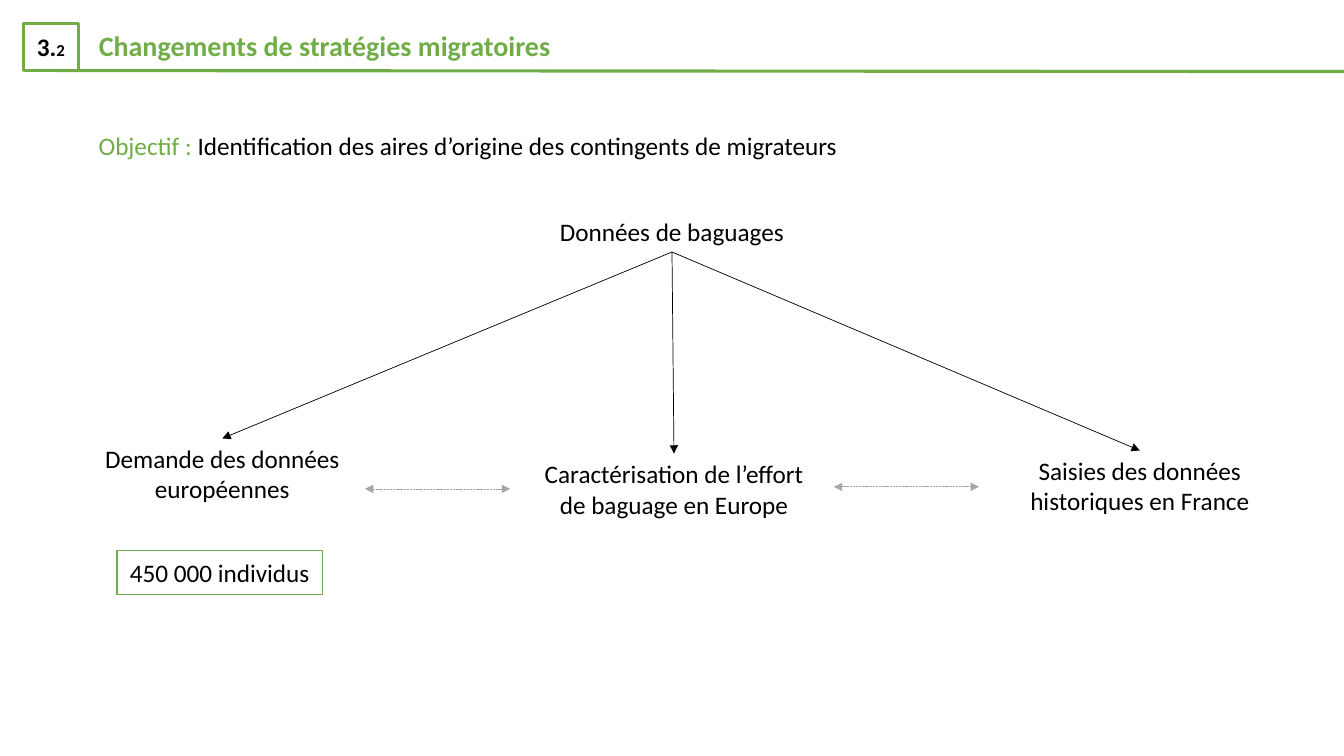
"""Build the slide on changes in migration strategies."""
from lxml import etree
from pptx import Presentation
from pptx.dml.color import RGBColor
from pptx.enum import dml, shapes, text
from pptx.oxml import ns
from pptx.util import Inches, Pt

GREEN = RGBColor(0x70, 0xAD, 0x47)
GREY = RGBColor(0xA6, 0xA6, 0xA6)
BLACK = RGBColor(0, 0, 0)
WHITE = RGBColor(255, 255, 255)
CENTER = text.PP_ALIGN.CENTER


def write(box, words, align=CENTER, size=18, color=BLACK):
    """Fill a shape with one paragraph and return that paragraph."""
    box.text_frame.word_wrap = True
    para = box.text_frame.paragraphs[0]
    para.text = words
    para.alignment = align
    para.font.name = "Calibri"
    para.font.size = Pt(size)
    para.font.color.rgb = color
    return para


def draw_line(start, end, color, width, arrows=()):
    """Draw a straight line with triangles at the named ends."""
    points = [Inches(value) for value in (*start, *end)]
    line = page.shapes.add_connector(shapes.MSO_CONNECTOR.STRAIGHT, *points)
    line.line.color.rgb = color
    line.line.width = Pt(width)
    for name in arrows:
        etree.SubElement(line.line._get_or_add_ln(), ns.qn(f"a:{name}"), type="triangle")
    etree.SubElement(line._element.spPr, ns.qn("a:effectLst"))
    return line


deck = Presentation()
deck.slide_width = Inches(13.33)
deck.slide_height = Inches(7.5)
page = deck.slides.add_slide(deck.slide_layouts[5])

title = page.shapes.title
title.left, title.top = Inches(0.88), Inches(0.23)
title.width, title.height = Inches(4.75), Inches(0.44)
heading = write(title, "Changements de stratégies migratoires", text.PP_ALIGN.LEFT, 20, GREEN)
heading.font.bold = True
title.text_frame.word_wrap = False
title.text_frame.auto_size = text.MSO_AUTO_SIZE.NONE
title.text_frame.vertical_anchor = text.MSO_ANCHOR.TOP

draw_line((0.56, 0.7), (13.33, 0.71), GREEN, 2.25)

goal = page.shapes.add_textbox(Inches(0.88), Inches(1.17), Inches(10.17), Inches(0.45))
goal_para = write(goal, "Objectif : ", text.PP_ALIGN.LEFT)
goal_para.line_spacing = 1.25
goal_para.runs[0].font.color.rgb = GREEN
span = goal_para.add_run()
span.text = "Identification des aires d’origine des contingents de migrateurs"

source = page.shapes.add_textbox(0, Inches(2.1), deck.slide_width, Inches(0.4))
write(source, "Données de baguages")

branches = [
    (0.78, 4.35, "Demande des données européennes"),
    (5.26, 4.5, "Caractérisation de l’effort de baguage en Europe"),
    (9.88, 4.47, "Saisies des données historiques en France"),
]
for left, top, words in branches:
    branch = page.shapes.add_textbox(Inches(left), Inches(top), Inches(2.85), Inches(0.71))
    write(branch, words)
    arrow = draw_line((6.67, 2.5), (left + 1.43, top), BLACK, 0.5, ["tailEnd"])
    arrow.begin_connect(source, 2)
    arrow.end_connect(branch, 0)

for left, top in [(3.62, 4.85), (8.27, 4.83)]:
    link = draw_line((left, top), (left + 1.44, top), GREY, 0.5, ["headEnd", "tailEnd"])
    link.line.dash_style = dml.MSO_LINE.SQUARE_DOT

frames = [
    ((1.16, 5.46, 2.04, 0.44), 1, "450 000 individus"),
    ((0.23, 0.23, 0.55, 0.47), 2.25, "3."),
]
for place, width, words in frames:
    frame = page.shapes.add_shape(shapes.MSO_SHAPE.RECTANGLE, *map(Inches, place))
    frame.shadow.inherit = False
    frame.fill.solid()
    frame.fill.fore_color.rgb = WHITE
    frame.line.color.rgb = GREEN
    frame.line.width = Pt(width)
    label = write(frame, words)
    frame.text_frame.word_wrap = False

label.font.bold = True
span = label.add_run()
span.text = "2"
span.font.size = Pt(12)

deck.save("out.pptx")
